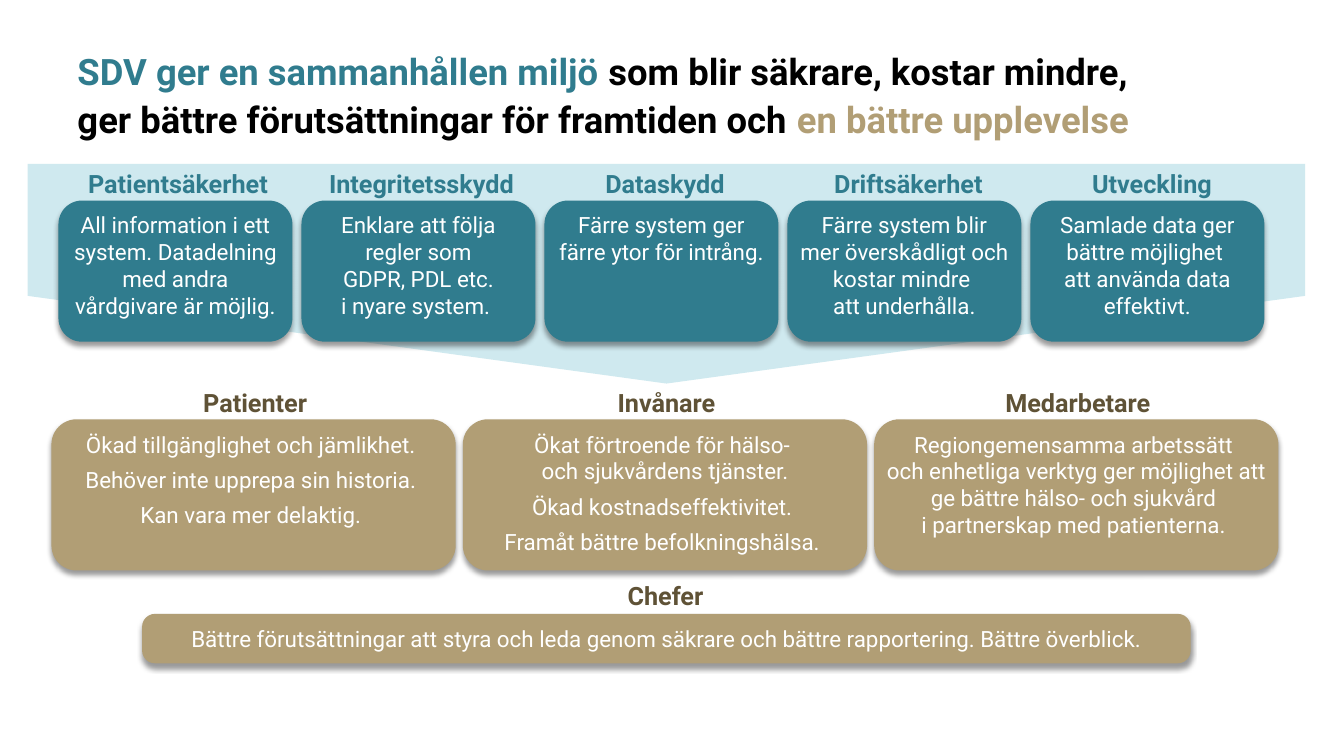
from lxml import etree
from pptx import Presentation
from pptx import util as u
from pptx.dml.color import RGBColor
from pptx.enum import shapes, text
from pptx.oxml import ns

COLOURS = {
    "teal": "307C8E", "pale": "CFE9EF", "sand": "B19E75",
    "brown": "5F5236", "black": "000000", "white": "FFFFFF",
}
FONT = "Roboto"

BENEFITS = [
    ("Patientsäkerhet", "All information i ett system. Datadelning med andra vårdgivare är möjlig."),
    ("Integritetsskydd", "Enklare att följa regler som\nGDPR, PDL etc.\ni nyare system. "),
    ("Dataskydd", "Färre system ger färre ytor för intrång."),
    ("Driftsäkerhet", "Färre system blir\nmer överskådligt och kostar mindre \natt underhålla."),
    ("Utveckling", "Samlade data ger bättre möjlighet \natt använda data effektivt."),
]
AUDIENCES = [
    ("Patienter", ["Ökad tillgänglighet och jämlikhet. ",
                   "Behöver inte upprepa sin historia. ",
                   "Kan vara mer delaktig. "]),
    ("Invånare", ["Ökat förtroende för hälso- \noch sjukvårdens tjänster.",
                  "Ökad kostnadseffektivitet. ",
                  "Framåt bättre befolkningshälsa. "]),
    ("Medarbetare", ["Regiongemensamma arbetssätt \noch enhetliga verktyg ger möjlighet att "
                     "ge bättre hälso- och sjukvård \ni partnerskap med patienterna. "]),
]
MANAGERS = ("Bättre förutsättningar att styra och leda genom säkrare och bättre "
            "rapportering. Bättre överblick.")


class SlideBuilder:
    def __init__(self, deck):
        self.page = deck.slides.add_slide(deck.slide_layouts[6])

    def add_words(self, para, words, size, colour, bold=False):
        """Add words to a paragraph, turning each newline into a line break."""
        for number, line in enumerate(words.split("\n")):
            if number:
                para.add_line_break()
            span = para.add_run()
            span.text = line
            span.font.name = FONT
            span.font.size = u.Pt(size)
            span.font.bold = bold
            span.font.color.rgb = RGBColor.from_string(COLOURS[colour])

    def frame(self, box, side, top, anchor=text.MSO_ANCHOR.TOP):
        """Set wrapping, insets and anchor, and return the text frame."""
        frame = box.text_frame
        frame.word_wrap = True
        frame.margin_left = frame.margin_right = u.Inches(side)
        frame.margin_top = frame.margin_bottom = u.Inches(top)
        frame.vertical_anchor = anchor
        return frame

    def text_box(self, left, top, width, height, inset_top=0):
        box = self.page.shapes.add_textbox(*map(u.Inches, (left, top, width, height)))
        return self.frame(box, 0.1, inset_top)

    def title(self, spans):
        para = self.text_box(0.67, 0.39, 12.28, 0.8, 0.05).paragraphs[0]
        para.line_spacing = 1.1
        for words, colour in spans:
            self.add_words(para, words, 26, colour, bold=True)

    def heading(self, words, left, top, width, colour):
        para = self.text_box(left, top, width, 0.38).paragraphs[0]
        para.alignment = text.PP_ALIGN.CENTER
        self.add_words(para, words, 18, colour, bold=True)

    def shape(self, kind, left, top, width, height, colour):
        box = self.page.shapes.add_shape(kind, *map(u.Inches, (left, top, width, height)))
        box.shadow.inherit = False
        box.fill.solid()
        box.fill.fore_color.rgb = RGBColor.from_string(COLOURS[colour])
        box.line.fill.background()
        return box

    def down_banner(self):
        banner = self.shape(shapes.MSO_SHAPE.PENTAGON, 5.52, -3.62, 2.18, 12.67, "pale")
        banner.adjustments[0] = 0.399
        banner.rotation = 90

    def drop_shadow(self, box):
        effects = box._element.spPr.find(ns.qn("a:effectLst"))
        shadow = etree.SubElement(effects, ns.qn("a:outerShdw"), blurRad=str(u.Pt(4)),
                                  dist=str(u.Pt(3)), dir="5400000", algn="t", rotWithShape="0")
        colour = etree.SubElement(shadow, ns.qn("a:srgbClr"), val=COLOURS["black"])
        etree.SubElement(colour, ns.qn("a:alpha"), val="40000")

    def card(self, lines, left, top, width, height, colour, side=0.04,
             anchor=text.MSO_ANCHOR.TOP, corner=0.1667):
        box = self.shape(shapes.MSO_SHAPE.ROUNDED_RECTANGLE, left, top, width, height, colour)
        box.adjustments[0] = corner
        self.drop_shadow(box)
        frame = self.frame(box, side, 0.04, anchor)
        for number, line in enumerate(lines):
            para = frame.add_paragraph() if number else frame.paragraphs[0]
            para.alignment = text.PP_ALIGN.CENTER
            para.space_after = u.Pt(6)
            self.add_words(para, line, 16, "white")


def main():
    deck = Presentation()
    deck.slide_width, deck.slide_height = u.Inches(13.33), u.Inches(7.5)
    slide = SlideBuilder(deck)
    slide.down_banner()
    slide.title([
        ("SDV ger en sammanhållen miljö ", "teal"),
        ("som blir säkrare, kostar mindre, \nger bättre förutsättningar för framtiden och ", "black"),
        ("en bättre upplevelse", "sand"),
    ])
    for column, (name, words) in enumerate(BENEFITS):
        slide.heading(name, 0.64 + 2.415 * column, 1.67, 2.25, "teal")
        slide.card([words], 0.58 + 2.41 * column, 1.99, 2.32, 1.4, "teal")
    for column, (name, lines) in enumerate(AUDIENCES):
        slide.heading(name, 0.59 + 4.08 * column, 3.84, 3.88, "brown")
        slide.card(lines, 0.51 + 4.08 * column, 4.16, 4.01, 1.5, "sand")
    slide.card([MANAGERS], 1.41, 6.09, 10.4, 0.49, "sand", side=0.1,
               anchor=text.MSO_ANCHOR.MIDDLE, corner=0.26)
    slide.heading("Chefer", 4.66, 5.76, 3.88, "brown")
    deck.save("out.pptx")


if __name__ == "__main__":
    main()
